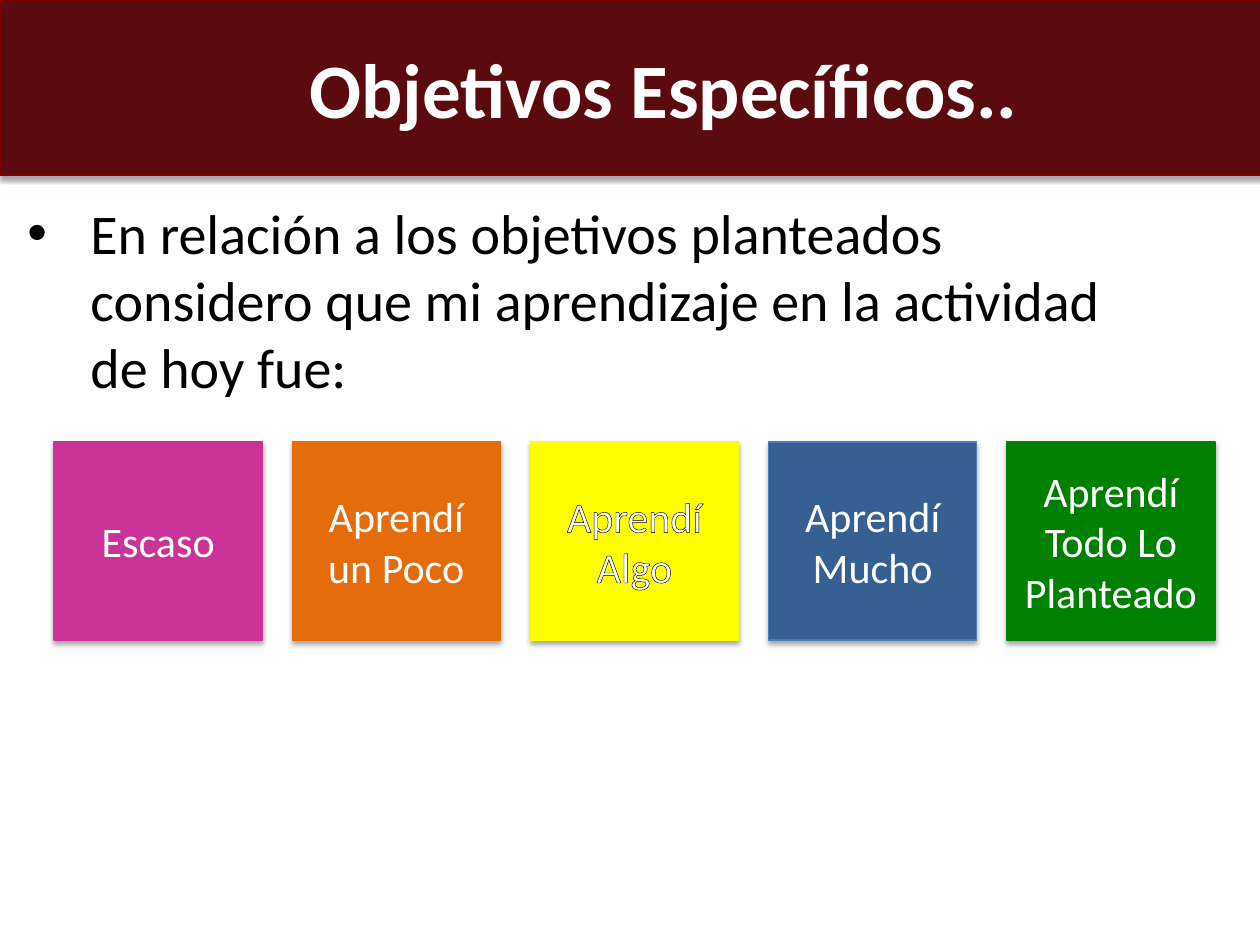
from dataclasses import dataclass

from lxml import etree
from pptx import Presentation
from pptx import util as u
from pptx.dml.color import RGBColor
from pptx.enum import shapes, text
from pptx.oxml import ns


@dataclass(frozen=True)
class Theme:
    font: str = "Calibri"
    title_size: int = 44
    body_size: int = 32
    card_size: int = 24
    line_width: float = 0.75
    dark: str = "000000"
    light: str = "FFFFFF"
    banner: str = "5B0B0F"
    banner_line: str = "800000"


T = Theme()
INDENT = 63
CARDS = [
    ("Escaso", "CC3399", "CC3399", False),
    ("Aprendí un Poco", "E46C0A", "E46C0A", False),
    ("Aprendí Algo", "FFFF00", "FFFF00", True),
    ("Aprendí Mucho", "376092", "4B7EBC", False),
    ("Aprendí Todo Lo Planteado", "008000", "008000", False),
]


def px(n):
    return u.Emu(round(n * 914400 / 126))


def sub(parent, tag, **attrs):
    el = etree.SubElement(parent, ns.qn(tag))
    for name, value in attrs.items():
        el.set(name, str(value))
    return el


def add_shadow(sp):
    sp.shadow.inherit = False
    effects = sp._element.spPr.find(ns.qn("a:effectLst"))
    shadow = sub(effects, "a:outerShdw", blurRad=40000, dist=23000,
                 dir=5400000, rotWithShape=0)
    sub(sub(shadow, "a:srgbClr", val=T.dark), "a:alpha", val=35000)


def set_font(p, size, color, bold=False):
    f = p.font
    f.name, f.size, f.bold = T.font, u.Pt(size), bold
    f.color.rgb = RGBColor.from_string(color)


def add_panel(s, box, words, fill, line, size, bold=False):
    sp = s.shapes.add_shape(shapes.MSO_SHAPE.RECTANGLE, *map(px, box))
    sp.fill.solid()
    sp.fill.fore_color.rgb = RGBColor.from_string(fill)
    sp.line.color.rgb = RGBColor.from_string(line)
    sp.line.width = u.Pt(T.line_width)
    add_shadow(sp)
    tf = sp.text_frame
    tf.word_wrap = True
    tf.vertical_anchor = text.MSO_ANCHOR.MIDDLE
    p = tf.paragraphs[0]
    p.text = words
    p.alignment = text.PP_ALIGN.CENTER
    set_font(p, size, T.light, bold)
    return p


def outline_text(p):
    rPr = p.runs[0]._r.get_or_add_rPr()
    ln = sub(rPr, "a:ln", w=u.Pt(T.line_width))
    sub(sub(ln, "a:solidFill"), "a:srgbClr", val=T.dark)


def add_banner(s, box):
    p = add_panel(s, box, "Objetivos Específicos..", T.banner,
                  T.banner_line, T.title_size, True)
    pPr = p._p.get_or_add_pPr()
    pPr.set("marL", str(px(INDENT)))
    pPr.set("lvl", "1")


def add_statement(s, box):
    tf = s.shapes.add_textbox(*map(px, box)).text_frame
    tf.word_wrap = True
    tf.auto_size = text.MSO_AUTO_SIZE.SHAPE_TO_FIT_TEXT
    p = tf.paragraphs[0]
    p.text = ("En relación a los objetivos planteados considero que "
              "mi aprendizaje en la actividad de hoy fue:")
    pPr = p._p.get_or_add_pPr()
    pPr.set("marL", str(px(INDENT)))
    pPr.set("indent", str(-px(INDENT)))
    sub(pPr, "a:buFont", typeface="Arial")
    sub(pPr, "a:buChar", char="•")
    set_font(p, T.body_size, T.dark)


def add_cards(s, box, gap):
    x, y, w, h = box
    card_w = (w - gap * (len(CARDS) - 1)) / len(CARDS)
    for i, (words, fill, line, outlined) in enumerate(CARDS):
        p = add_panel(s, (x + i * (card_w + gap), y, card_w, h),
                      words, fill, line, T.card_size)
        if outlined:
            outline_text(p)


def main():
    prs = Presentation()
    prs.slide_width, prs.slide_height = px(1260), px(945)
    s = prs.slides.add_slide(prs.slide_layouts[6])
    add_banner(s, (0, 0, 1265, 175))
    add_statement(s, (15, 192, 1150, 217))
    add_cards(s, (54, 442, 1161, 198), 30)
    prs.save("out.pptx")


if __name__ == "__main__":
    main()
